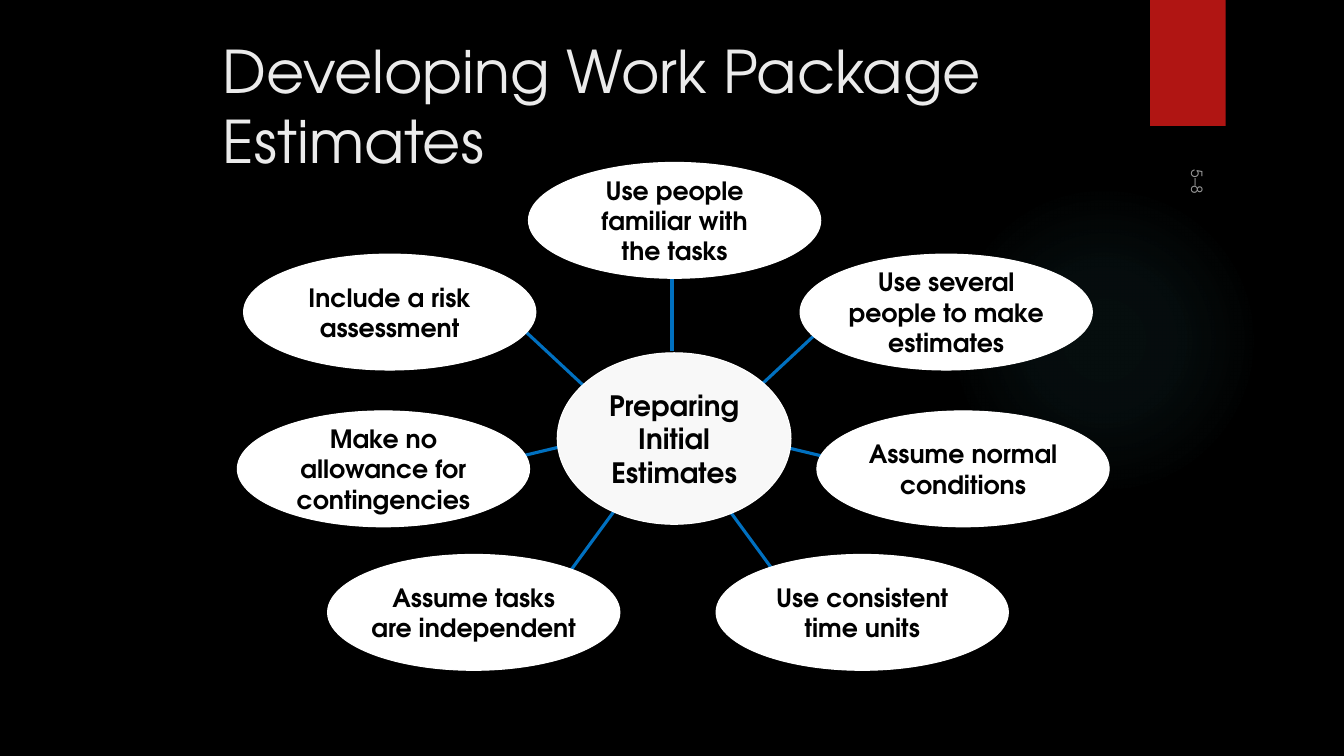
from dataclasses import dataclass

from lxml import etree
from pptx import Presentation
from pptx.dml.color import RGBColor
from pptx.enum.shapes import MSO_CONNECTOR, MSO_SHAPE
from pptx.enum.text import MSO_ANCHOR, PP_ALIGN
from pptx.oxml import parse_xml
from pptx.oxml.ns import nsdecls, qn
from pptx.util import Pt

OVAL, RECT = MSO_SHAPE.OVAL, MSO_SHAPE.RECTANGLE
STRAIGHT = MSO_CONNECTOR.STRAIGHT
TOP, MIDDLE, BOTTOM = MSO_ANCHOR.TOP, MSO_ANCHOR.MIDDLE, MSO_ANCHOR.BOTTOM
LEFT, CENTER = PP_ALIGN.LEFT, PP_ALIGN.CENTER

FONT = "TeX Gyre Adventor"
COLORS = {
    "back": "000000", "ink": "000000", "white": "FFFFFF", "hub": "F8F8F8",
    "title": "EBEBEB", "spoke": "0070C0", "tab": "B01513", "glow": "50B9C1",
}
WIDTH, HEIGHT = 960, 540
TIP_W, TIP_H = 208.8, 82.8


@dataclass
class Box:
    x: float
    y: float
    w: float
    h: float


@dataclass
class Tip:
    text: str
    x: float
    y: float


@dataclass
class Spoke:
    x1: float
    y1: float
    x2: float
    y2: float

    def mirror(self) -> "Spoke":
        return Spoke(WIDTH - self.x1, self.y1, WIDTH - self.x2, self.y2)


TIPS = [
    Tip("Use several people to make estimates", 571.5, 181.5),
    Tip("Assume normal conditions", 583.5, 293.5),
    Tip("Use consistent time units", 511.5, 396),
    Tip("Assume tasks are independent", 234, 396),
    Tip("Make no allowance for contingencies", 169.5, 293.5),
    Tip("Include a risk assessment", 174, 181.5),
    Tip("Use people familiar with\vthe tasks", 377.5, 116),
]
SIDE = [
    Spoke(374.5, 236, 418.5, 277),
    Spoke(355, 330, 413.5, 316),
    Spoke(443.5, 358.5, 408, 407),
]
SPOKES = [Spoke(480, 191, 480, 250.5)] + SIDE + [s.mirror() for s in SIDE]


def color(name: str) -> RGBColor:
    return RGBColor.from_string(COLORS[name])


def write(shape, text: str, size: float, tint: str, bold: bool = False,
          align=CENTER, anchor=MIDDLE, side: float = 0, edge: float = 0) -> None:
    frame = shape.text_frame
    frame.word_wrap = True
    frame.vertical_anchor = anchor
    frame.margin_left = frame.margin_right = Pt(side)
    frame.margin_top = frame.margin_bottom = Pt(edge)
    para = frame.paragraphs[0]
    para.text = text
    para.alignment = align
    font = para.font
    font.name, font.size, font.bold = FONT, Pt(size), bold
    font.color.rgb = color(tint)


def label(slide, box: Box):
    return slide.shapes.add_textbox(Pt(box.x), Pt(box.y), Pt(box.w), Pt(box.h))


def solid(slide, kind, box: Box, tint: str, rim: str = ""):
    shape = slide.shapes.add_shape(kind, Pt(box.x), Pt(box.y), Pt(box.w), Pt(box.h))
    shape.shadow.inherit = False
    shape.fill.solid()
    shape.fill.fore_color.rgb = color(tint)
    if rim:
        shape.line.color.rgb = color(rim)
        shape.line.width = Pt(0.75)
    else:
        shape.line.fill.background()
    return shape


def glow(slide, box: Box) -> None:
    shape = solid(slide, OVAL, box, "glow")
    stops = "".join(
        f'<a:gs pos="{pos * 1000}"><a:srgbClr val="{COLORS["glow"]}">'
        f'<a:alpha val="{alpha * 1000}"/></a:srgbClr></a:gs>'
        for pos, alpha in ((0, 7), (36, 6), (69, 0), (100, 0))
    )
    grad = parse_xml(
        f'<a:gradFill {nsdecls("a")} rotWithShape="1"><a:gsLst>{stops}</a:gsLst>'
        '<a:path path="circle"><a:fillToRect l="50000" t="50000" r="50000" '
        'b="50000"/></a:path></a:gradFill>'
    )
    props = shape._element.spPr
    props.replace(props.find(qn("a:solidFill")), grad)


def number(slide, text: str) -> None:
    box = label(slide, Box(705, 254, 304, 24))
    box.rotation = 90
    write(box, text, 11, "white", align=LEFT, anchor=BOTTOM, side=7.2, edge=3.6)
    for tint in box._element.iter(qn("a:srgbClr")):
        etree.SubElement(tint, qn("a:alpha"), val="60000")


def link(slide, spoke: Spoke) -> None:
    line = slide.shapes.add_connector(
        STRAIGHT, Pt(spoke.x1), Pt(spoke.y1), Pt(spoke.x2), Pt(spoke.y2))
    line.line.color.rgb = color("spoke")
    line.line.width = Pt(2.25)
    etree.SubElement(line._element.spPr, qn("a:effectLst"))


def main() -> None:
    deck = Presentation()
    deck.slide_width, deck.slide_height = Pt(WIDTH), Pt(HEIGHT)
    slide = deck.slides.add_slide(deck.slide_layouts[6])
    slide.background.fill.solid()
    slide.background.fill.fore_color.rgb = color("back")

    glow(slide, Box(677.5, 132, 222, 222))
    solid(slide, RECT, Box(821.5, 0, 54, 90), "tab")
    number(slide, "5–8")
    write(label(slide, Box(159, 21, 642, 67)), "Developing Work Package Estimates",
          42, "title", align=LEFT, anchor=TOP, edge=3.6)

    for spoke in SPOKES:
        link(slide, spoke)
    hub = solid(slide, OVAL, Box(398, 252, 167, 122.5), "hub", "white")
    write(hub, "Preparing Initial Estimates", 20, "ink", bold=True)
    for tip in TIPS:
        oval = solid(slide, OVAL, Box(tip.x, tip.y, TIP_W, TIP_H), "white", "white")
        write(oval, tip.text, 18, "ink", bold=True)
    deck.save("out.pptx")


if __name__ == "__main__":
    main()
